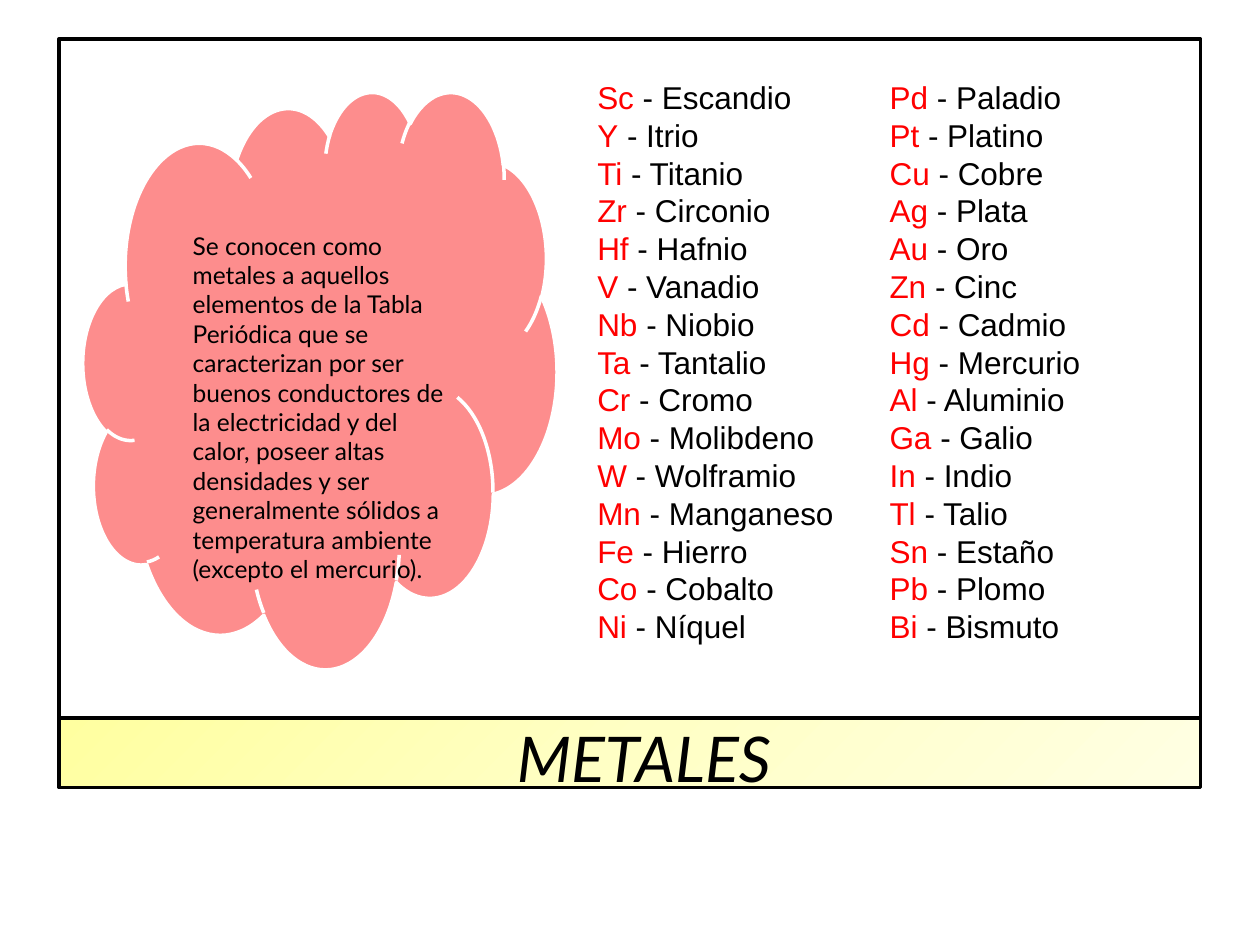
from copy import deepcopy
from dataclasses import dataclass

from pptx import Presentation
from pptx.dml.color import RGBColor
from pptx.enum.shapes import MSO_SHAPE as Preset
from pptx.enum.text import MSO_ANCHOR as Anchor, MSO_AUTO_SIZE as AutoSize, PP_ALIGN as Align
from pptx.oxml.ns import qn
from pptx.oxml.xmlchemy import OxmlElement
from pptx.shapes.autoshape import Shape
from pptx.slide import Slide
from pptx.text.text import TextFrame, _Run as Run
from pptx.util import Pt


@dataclass(frozen=True)
class Theme:
    black: str = "000000"
    white: str = "FFFFFF"
    symbol: str = "FF0000"
    cloud: str = "FD8D8D"
    band: tuple[str, ...] = ("FFFFA0", "FFFFC5", "FFFFE3")
    text_font: str = "Lato"
    list_font: str = "Arial"
    title_size: float = 36
    list_size: float = 18
    text_size: float = 14
    line_width: float = 2


@dataclass(frozen=True)
class Box:
    left: float
    top: float
    width: float
    height: float

    def place(self, shape: Shape) -> None:
        shape.left, shape.top = Pt(self.left), Pt(self.top)
        shape.width, shape.height = Pt(self.width), Pt(self.height)


@dataclass(frozen=True)
class ElementList:
    box: Box
    elements: dict[str, str]


THEME = Theme()
FRAME = Box(33.8, 22.3, 652.3, 388.1)
BAND = Box(FRAME.left, FRAME.top + FRAME.height, FRAME.width, 39.6)
CLOUD = Box(47.5, 51.8, 270.7, 329.8)
TITLE = Box(41.8, 407.5, FRAME.width, 51.1)
DEFINITION = Box(103, 128.2, 159.8, 177.1)

DEFINITION_TEXT = (
    "Se conocen como metales a aquellos elementos de la Tabla Periódica que se "
    "caracterizan por ser buenos conductores de la electricidad y del calor, poseer "
    "altas densidades y ser generalmente sólidos a temperatura ambiente "
    "(excepto el mercurio)."
)
LISTS = (
    ElementList(Box(334.1, 41, 167.8, 356.4), {
        "Sc": "Escandio", "Y": "Itrio", "Ti": "Titanio", "Zr": "Circonio", "Hf": "Hafnio",
        "V": "Vanadio", "Nb": "Niobio", "Ta": "Tantalio", "Cr": "Cromo", "Mo": "Molibdeno",
        "W": "Wolframio", "Mn": "Manganeso", "Fe": "Hierro", "Co": "Cobalto", "Ni": "Níquel",
    }),
    ElementList(Box(501.1, 41, 164.2, 334.1), {
        "Pd": "Paladio", "Pt": "Platino", "Cu": "Cobre", "Ag": "Plata", "Au": "Oro",
        "Zn": "Cinc", "Cd": "Cadmio", "Hg": "Mercurio", "Al": "Aluminio", "Ga": "Galio",
        "In": "Indio", "Tl": "Talio", "Sn": "Estaño", "Pb": "Plomo", "Bi": "Bismuto",
    }),
)


def add_outlined(slide: Slide, preset: Preset, box: Box, fill: str, line: str) -> Shape:
    shape = slide.shapes.add_shape(preset, 0, 0, 0, 0)
    box.place(shape)
    shape.shadow.inherit = False
    shape.fill.solid()
    shape.fill.fore_color.rgb = RGBColor.from_string(fill)
    shape.line.color.rgb = RGBColor.from_string(line)
    shape.line.width = Pt(THEME.line_width)
    return shape


def apply_gradient(shape: Shape, colors: tuple[str, ...]) -> None:
    """Spread the colours evenly along a diagonal gradient."""
    shape.fill.gradient()
    shape.fill.gradient_angle = 315
    stops = shape.fill._fill._gradFill.find(qn("a:gsLst"))
    while len(stops) < len(colors):
        stops.append(deepcopy(stops[0]))
    for index, (stop, color) in enumerate(zip(shape.fill.gradient_stops, colors)):
        stop.position = index / (len(colors) - 1)
        stop.color.rgb = RGBColor.from_string(color)


def format_run(run: Run, font: str, size: float, color: str) -> None:
    run.font.name = font
    run.font.size = Pt(size)
    run.font.color.rgb = RGBColor.from_string(color)


def prepare_text(frame: TextFrame) -> None:
    frame.word_wrap = True
    frame.auto_size = AutoSize.NONE
    frame.vertical_anchor = Anchor.TOP


def bring_to_front(slide: Slide, shape: Shape) -> None:
    slide.shapes._spTree.append(shape._element)


def fill_list(placeholder: Shape, content: ElementList) -> None:
    content.box.place(placeholder)
    frame = placeholder.text_frame
    prepare_text(frame)
    frame.text = "\n".join(content.elements)
    for paragraph, name in zip(frame.paragraphs, content.elements.values()):
        paragraph.space_before = Pt(0)
        properties = paragraph._p.get_or_add_pPr()
        properties.set("marL", "0")
        properties.set("indent", "0")
        properties.append(OxmlElement("a:buNone"))
        paragraph.add_run().text = f" - {name}"
        for run, color in zip(paragraph.runs, (THEME.symbol, THEME.black)):
            format_run(run, THEME.list_font, THEME.list_size, color)


def main() -> None:
    presentation = Presentation()
    presentation.slide_width, presentation.slide_height = Pt(720), Pt(540)
    slide = presentation.slides.add_slide(presentation.slide_layouts.get_by_name("Two Content"))
    title, *bodies = slide.placeholders

    # Frame, title band and cloud
    add_outlined(slide, Preset.RECTANGLE, FRAME, THEME.white, THEME.black)
    band = add_outlined(slide, Preset.RECTANGLE, BAND, THEME.white, THEME.black)
    apply_gradient(band, THEME.band)
    add_outlined(slide, Preset.CLOUD, CLOUD, THEME.cloud, THEME.white)

    # Title
    bring_to_front(slide, title)
    TITLE.place(title)
    prepare_text(title.text_frame)
    title.text_frame.text = "METALES"
    heading = title.text_frame.paragraphs[0]
    heading.alignment = Align.CENTER
    format_run(heading.runs[0], THEME.text_font, THEME.title_size, THEME.black)
    heading.runs[0].font.italic = True

    # Definition over the cloud
    definition = slide.shapes.add_textbox(0, 0, 0, 0)
    DEFINITION.place(definition)
    prepare_text(definition.text_frame)
    definition.text_frame.text = DEFINITION_TEXT
    format_run(definition.text_frame.paragraphs[0].runs[0],
               THEME.text_font, THEME.text_size, THEME.black)

    # Lists of elements
    for body, content in zip(bodies, LISTS):
        bring_to_front(slide, body)
        fill_list(body, content)

    presentation.save("out.pptx")


if __name__ == "__main__":
    main()
